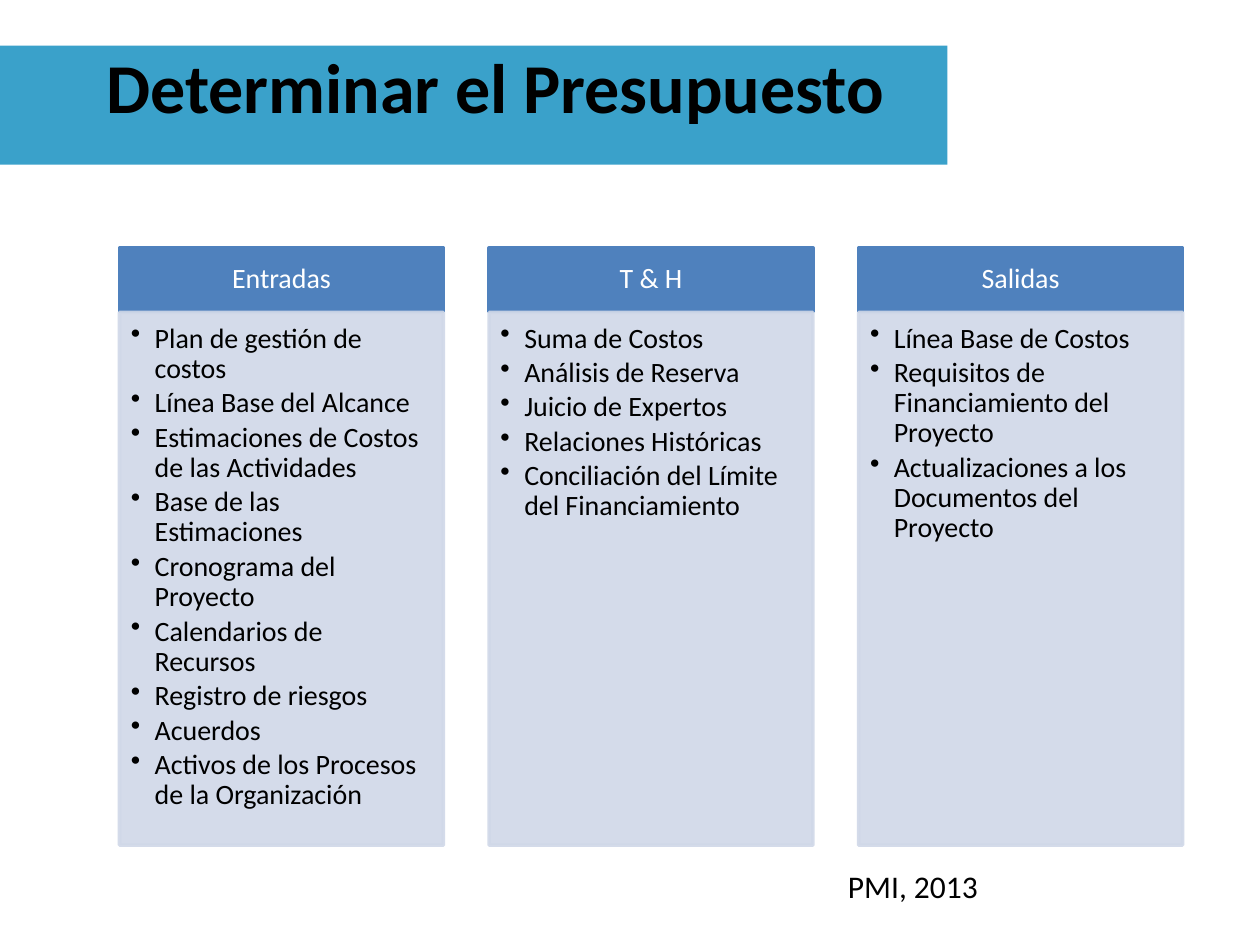
from dataclasses import dataclass

from pptx import Presentation
from pptx.dml.color import RGBColor
from pptx.enum.shapes import MSO_SHAPE
from pptx.enum.text import MSO_ANCHOR, PP_ALIGN
from pptx.oxml.ns import qn
from pptx.oxml.xmlchemy import OxmlElement
from pptx.util import Cm, Pt

RECT = MSO_SHAPE.RECTANGLE
TOP, MIDDLE = MSO_ANCHOR.TOP, MSO_ANCHOR.MIDDLE
LEFT, CENTER = PP_ALIGN.LEFT, PP_ALIGN.CENTER

FONT = "Calibri"
COLORS = {
    "band": "3AA1CA",
    "head": "4F81BD",
    "body": "D0D8E8",
    "dark": "000000",
    "light": "FFFFFF",
}
COL_LEFT, COL_WIDTH, COL_STEP = 2.41, 6.53, 7.45
HEAD_TOP, HEAD_HIGH = 5.0, 1.28
BODY_TOP, BODY_HIGH = 6.3, 10.74
INDENT = 0.48


@dataclass
class Box:
    left: float
    top: float
    width: float
    height: float


@dataclass
class Column:
    head: str
    items: list[str]


COLUMNS = [
    Column("Entradas", [
        "Plan de gestión de costos",
        "Línea Base del Alcance",
        "Estimaciones de Costos de las Actividades",
        "Base de las Estimaciones",
        "Cronograma del Proyecto",
        "Calendarios de Recursos",
        "Registro de riesgos",
        "Acuerdos",
        "Activos de los Procesos de la Organización",
    ]),
    Column("T & H", [
        "Suma de Costos",
        "Análisis de Reserva",
        "Juicio de Expertos",
        "Relaciones Históricas",
        "Conciliación del Límite del Financiamiento",
    ]),
    Column("Salidas", [
        "Línea Base de Costos",
        "Requisitos de Financiamiento del Proyecto",
        "Actualizaciones a los Documentos del Proyecto",
    ]),
]


def place(box: Box) -> tuple:
    return Cm(box.left), Cm(box.top), Cm(box.width), Cm(box.height)


def add_rect(slide, box: Box, color: str, lined: bool = True):
    shape = slide.shapes.add_shape(RECT, *place(box))
    shape.shadow.inherit = False
    shape.fill.solid()
    shape.fill.fore_color.rgb = RGBColor.from_string(COLORS[color])
    if lined:
        shape.line.color.rgb = RGBColor.from_string(COLORS[color])
        shape.line.width = Pt(2)
    else:
        shape.line.fill.background()
    return shape


def fade(shape, percent: int) -> None:
    """Set the opacity of the fill and the line."""
    for color in shape._element.spPr.iter(qn("a:srgbClr")):
        alpha = OxmlElement("a:alpha")
        alpha.set("val", str(percent * 1000))
        color.append(alpha)


def add_bullet(para) -> None:
    props = para._p.get_or_add_pPr()
    props.set("marL", str(Cm(INDENT)))
    props.set("indent", str(-Cm(INDENT)))
    mark = OxmlElement("a:buChar")
    mark.set("char", "•")
    props.append(mark)


def set_frame(shape, anchor, insets: tuple):
    """Set wrapping, anchor and insets (left, top, right, bottom)."""
    frame = shape.text_frame
    frame.word_wrap = True
    frame.vertical_anchor = anchor
    (frame.margin_left, frame.margin_top,
     frame.margin_right, frame.margin_bottom) = map(Cm, insets)
    return frame


def style(para, text: str, size: int, color: str, align, bold: bool = False) -> None:
    para.text = text
    para.alignment = align
    font = para.font
    font.name, font.size, font.bold = FONT, Pt(size), bold
    font.color.rgb = RGBColor.from_string(COLORS[color])


def add_label(slide, box: Box, text: str, size: int, align, bold: bool = False) -> None:
    shape = slide.shapes.add_textbox(*place(box))
    frame = set_frame(shape, TOP, (0.25, 0.13, 0.25, 0.13))
    style(frame.paragraphs[0], text, size, "dark", align, bold)


def add_column(slide, left: float, column: Column) -> None:
    head = add_rect(slide, Box(left, HEAD_TOP, COL_WIDTH, HEAD_HIGH), "head")
    para = set_frame(head, MIDDLE, (0.3, 0.18, 0.3, 0.18)).paragraphs[0]
    para.line_spacing = 0.9
    style(para, column.head, 16, "light", CENTER)

    body = add_rect(slide, Box(left, BODY_TOP, COL_WIDTH, BODY_HIGH), "body")
    fade(body, 90)
    frame = set_frame(body, TOP, (0.23, 0.23, 0.3, 0.35))
    for i, item in enumerate(column.items):
        para = frame.add_paragraph() if i else frame.paragraphs[0]
        para.level = 1
        add_bullet(para)
        para.line_spacing = 0.9
        para.space_after = Pt(2.4)
        style(para, item, 16, "dark", LEFT)


def main() -> None:
    deck = Presentation()
    deck.slide_width, deck.slide_height = Cm(25.4), Cm(19.05)
    slide = deck.slides.add_slide(deck.slide_layouts[6])

    add_rect(slide, Box(0, 0.92, 19.1, 2.4), "band", lined=False)
    add_label(slide, Box(1.9, 0.74, 22.86, 3.18),
              "Determinar el Presupuesto", 40, LEFT, bold=True)
    for i, column in enumerate(COLUMNS):
        add_column(slide, COL_LEFT + i * COL_STEP, column)
    add_label(slide, Box(13.54, 17.35, 9.73, 1.02), "PMI, 2013", 18, CENTER)

    deck.save("out.pptx")


if __name__ == "__main__":
    main()
